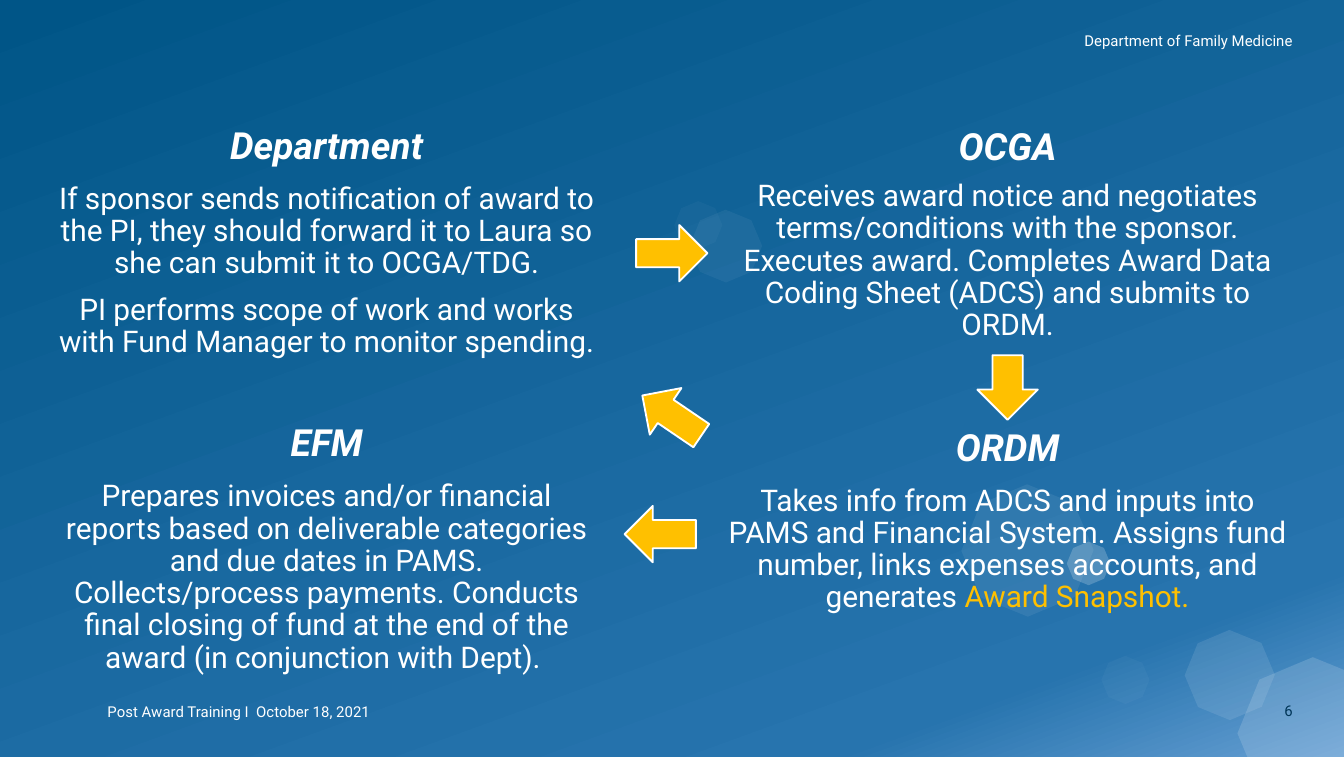
from copy import deepcopy

from lxml import etree
from pptx import Presentation
from pptx.dml.color import RGBColor
from pptx.enum import shapes, text
from pptx.oxml.ns import qn
from pptx.util import Pt

THEME = {
    "white": "FFFFFF", "gold": "FFC000", "navy": "003557",
    "gradient": [(0, "005587"), (0.85, "2774AE"), (1, "669FD3")],
    "font": "Roboto", "heading": 20, "body": 16, "small": 8,
}
ALIGN, ANCHOR, SHAPE = text.PP_ALIGN, text.MSO_ANCHOR, shapes.MSO_SHAPE


def write(box, place, runs, size, color="white", align=ALIGN.CENTER,
          anchor=ANCHOR.TOP, spacing=0.9, emphasis=False):
    """Place a text shape and fill it with one paragraph of (words, colour or None) runs."""
    box.left, box.top, box.width, box.height = map(Pt, place)
    frame = box.text_frame
    frame_format = {
        "word_wrap": True, "auto_size": text.MSO_AUTO_SIZE.NONE, "vertical_anchor": anchor,
        "margin_left": 0, "margin_top": 0, "margin_right": 0, "margin_bottom": 0,
    }
    for name, value in frame_format.items():
        setattr(frame, name, value)
    paragraph = frame.paragraphs[0]
    paragraph.alignment, paragraph.line_spacing = align, spacing
    font_format = {"name": THEME["font"], "size": Pt(THEME[size]),
                   "bold": emphasis, "italic": emphasis}
    for words, accent in runs:
        run = paragraph.add_run()
        run.text = words
        for name, value in font_format.items():
            setattr(run.font, name, value)
        run.font.color.rgb = RGBColor.from_string(THEME[accent or color])


def add_solid(preset, place, color, rotation):
    solid = slide.shapes.add_shape(preset, *map(Pt, place))
    solid.rotation = rotation
    solid.shadow.inherit = False
    solid.fill.solid()
    solid.fill.fore_color.rgb = RGBColor.from_string(THEME[color])
    return solid


deck = Presentation()
deck.slide_width, deck.slide_height = Pt(720), Pt(405.36)
slide = deck.slides.add_slide(deck.slide_layouts[5])

# Background gradient with three stops
backdrop = slide.background.fill
backdrop.gradient()
backdrop.gradient_angle = 290
last_stop = list(slide.element.iter(qn("a:gs")))[-1]
last_stop.addnext(deepcopy(last_stop))
for stop, (position, color) in zip(backdrop.gradient_stops, THEME["gradient"]):
    stop.position = position
    stop.color.rgb = RGBColor.from_string(color)

# Translucent octagons: left, top, side, opacity in percent
octagons = [
    (666, 355, 75, 15), (636.5, 339.2, 44.6, 10), (517.7, 262, 65.5, 7),
    (572.4, 290.9, 21.6, 20), (591, 352.2, 23.8, 3), (362.2, 108.7, 23.8, 3),
    (370.8, 113.8, 36, 5),
]
for left, top, side, opacity in octagons:
    octagon = add_solid(SHAPE.OCTAGON, (left, top, side, side), "white", 22.2)
    octagon.line.fill.background()
    tint = octagon.fill._xPr.find(qn("a:solidFill"))[0]
    etree.SubElement(tint, qn("a:alpha"), val=str(opacity * 1000))

# Header, footer and page number
margins = [
    ((491.8, 16.9, 200.9, 9.4), "Department of Family Medicine", "white", ALIGN.RIGHT, ANCHOR.TOP),
    ((57.6, 376.2, 410.4, 9.4), "Post Award Training I  October 18, 2021", "white",
     ALIGN.LEFT, ANCHOR.BOTTOM),
    ((649.4, 375.8, 43.2, 9.4), "6", "navy", ALIGN.RIGHT, ANCHOR.MIDDLE),
]
for place, words, color, align, anchor in margins:
    write(slide.shapes.add_textbox(0, 0, 0, 0), place, [(words, None)], "small",
          color, align, anchor, spacing=1)

# Four offices: column, heading top, heading, then body blocks (top, lines, runs)
LEFT_COLUMN, RIGHT_COLUMN = (29.2, 291.6), (386.8, 306)
LINE_HEIGHT = 17.4
offices = [
    (LEFT_COLUMN, 68, "Department", [
        (98.4, 3, [("If sponsor sends notification of award to the PI, they should forward it "
                    "to Laura so she can submit it to OCGA/TDG.", None)]),
        (157.7, 2, [("PI performs scope of work and works with Fund Manager to monitor "
                     "spending.", None)])]),
    (RIGHT_COLUMN, 68.7, "OCGA", [
        (96.8, 5, [("Receives award notice and negotiates terms/conditions with the sponsor. "
                    "Executes award. Completes Award Data Coding Sheet (ADCS) and submits to "
                    "ORDM.", None)])]),
    (RIGHT_COLUMN, 229.6, "ORDM", [
        (259.9, 4, [("Takes info from ADCS and inputs into PAMS and Financial System. Assigns "
                     "fund number, links expenses accounts, and generates ", None),
                    ("Award Snapshot.", "gold")])]),
    (LEFT_COLUMN, 227.1, "EFM", [
        (257.6, 6, [("Prepares invoices and/or financial reports based on deliverable "
                     "categories and due dates in PAMS. Collects/process payments. Conducts "
                     "final closing of fund at the end of the award (in conjunction with "
                     "Dept). ", None)])]),
]
for (left, width), heading_top, office, duties in offices:
    is_title = office == "Department"
    heading = slide.shapes.title if is_title else slide.shapes.add_textbox(0, 0, 0, 0)
    write(heading, (left, heading_top, width, 21.6), [(office, None)], "heading", emphasis=True)
    for top, lines, runs in duties:
        write(slide.shapes.add_textbox(0, 0, 0, 0),
              (left, top, width, lines * LINE_HEIGHT), runs, "body")

# Arrows around the cycle
arrows = [
    (SHAPE.RIGHT_ARROW, (340.8, 120.5, 38.2, 30.2), 0),
    (SHAPE.DOWN_ARROW, (523.6, 190.2, 32.4, 34.6), 0),
    (SHAPE.RIGHT_ARROW, (334.6, 270.9, 38.2, 30.2), 180),
    (SHAPE.RIGHT_ARROW, (340.8, 207.4, 38.2, 30.2), 214.2),
]
for preset, place, rotation in arrows:
    arrow = add_solid(preset, place, "gold", rotation)
    arrow.line.color.rgb = RGBColor.from_string(THEME["white"])
    arrow.line.width = Pt(1)

deck.save("out.pptx")
